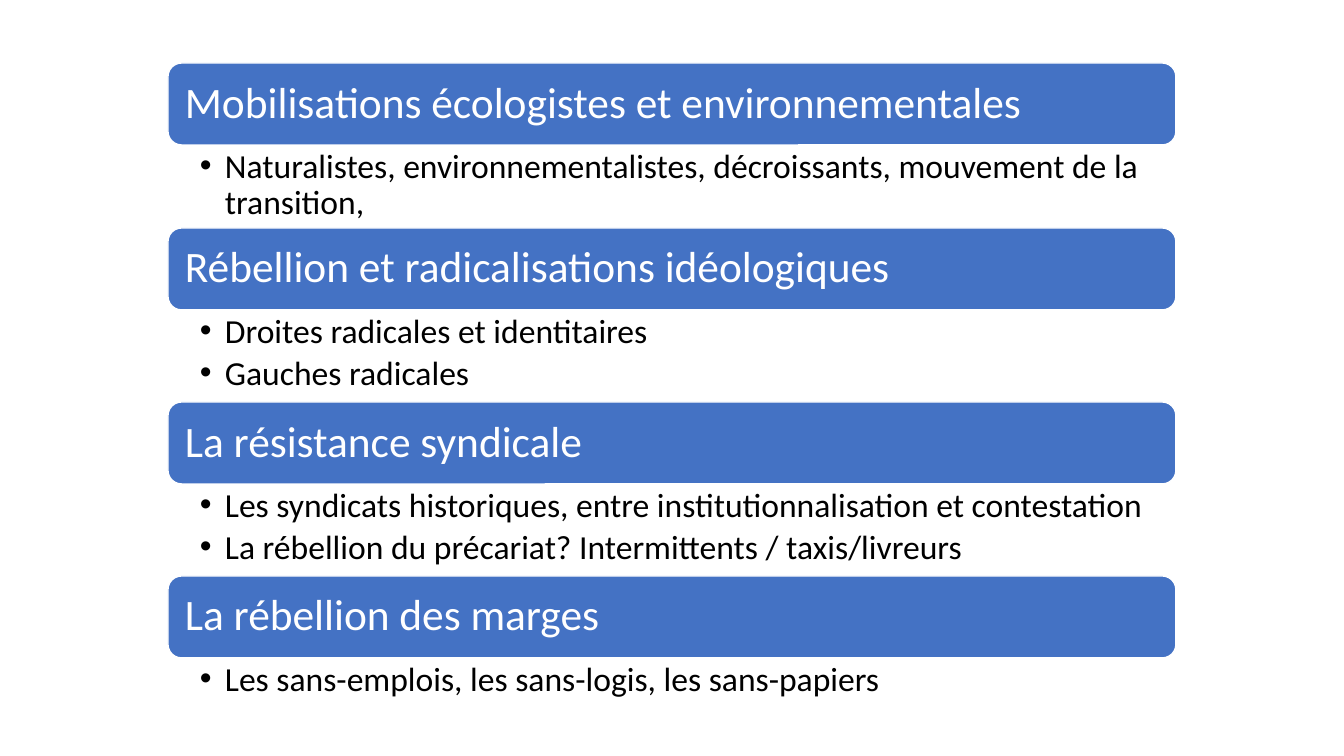
from lxml.etree import SubElement
from pptx import Presentation
from pptx.dml.color import RGBColor
from pptx.enum.shapes import MSO_SHAPE as Preset
from pptx.enum.text import MSO_ANCHOR as Anchor, PP_ALIGN as Align
from pptx.oxml.ns import qn
from pptx.util import Pt

PX = 914400 / 100.8
COLORS = {"band": "4472C4", "white": "FFFFFF", "black": "000000"}
LEFT, TOP, WIDTH, BAND_HEIGHT = 168, 63, 1008, 82
BULLET_INDENT = 25

SECTIONS = [
    ("Mobilisations écologistes et environnementales", 83, [
        "Naturalistes, environnementalistes, décroissants, mouvement de la transition,",
    ]),
    ("Rébellion et radicalisations idéologiques", 92, [
        "Droites radicales et identitaires",
        "Gauches radicales",
    ]),
    ("La résistance syndicale", 92, [
        "Les syndicats historiques, entre institutionnalisation et contestation",
        "La rébellion du précariat? Intermittents / taxis/livreurs",
    ]),
    ("La rébellion des marges", 56, [
        "Les sans-emplois, les sans-logis, les sans-papiers",
    ]),
]


def px(length):
    return round(length * PX)


def write(frame, lines, size, color, insets, anchor=Anchor.TOP, bullets=False):
    """Fill a text frame; insets run left, top, right, bottom in px."""
    frame.word_wrap = True
    frame.vertical_anchor = anchor
    (frame.margin_left, frame.margin_top,
     frame.margin_right, frame.margin_bottom) = map(px, insets)
    for i, line in enumerate(lines):
        paragraph = frame.add_paragraph() if i else frame.paragraphs[0]
        paragraph.alignment = Align.LEFT
        paragraph.line_spacing = 0.9
        run = paragraph.add_run()
        run.text = line
        run.font.name = "Calibri"
        run.font.size = Pt(size)
        run.font.color.rgb = RGBColor.from_string(COLORS[color])
        if bullets:
            paragraph.level = 1
            paragraph.space_after = px(6)
            properties = paragraph._p.get_or_add_pPr()
            properties.set("marL", str(px(BULLET_INDENT)))
            properties.set("indent", str(px(-BULLET_INDENT)))
            SubElement(properties, qn("a:buFont"), typeface="Arial")
            SubElement(properties, qn("a:buChar"), char="•")


prs = Presentation()
prs.slide_width, prs.slide_height = px(1344), px(756)
slide = prs.slides.add_slide(prs.slide_layouts[6])

top = TOP
for heading, list_height, topics in SECTIONS:
    band = slide.shapes.add_shape(
        Preset.ROUNDED_RECTANGLE, px(LEFT), px(top), px(WIDTH), px(BAND_HEIGHT))
    band.shadow.inherit = False
    band.fill.solid()
    band.fill.fore_color.rgb = RGBColor.from_string(COLORS["band"])
    band.line.color.rgb = RGBColor.from_string(COLORS["white"])
    band.line.width = Pt(1)
    write(band.text_frame, [heading], size=31, color="white",
          insets=(13, 13, 13, 13), anchor=Anchor.MIDDLE)
    top += BAND_HEIGHT

    topic_list = slide.shapes.add_textbox(
        px(LEFT), px(top), px(WIDTH), px(list_height))
    write(topic_list.text_frame, topics, size=24, color="black",
          insets=(32, 4, 24, 4), bullets=True)
    top += list_height

prs.save("out.pptx")
